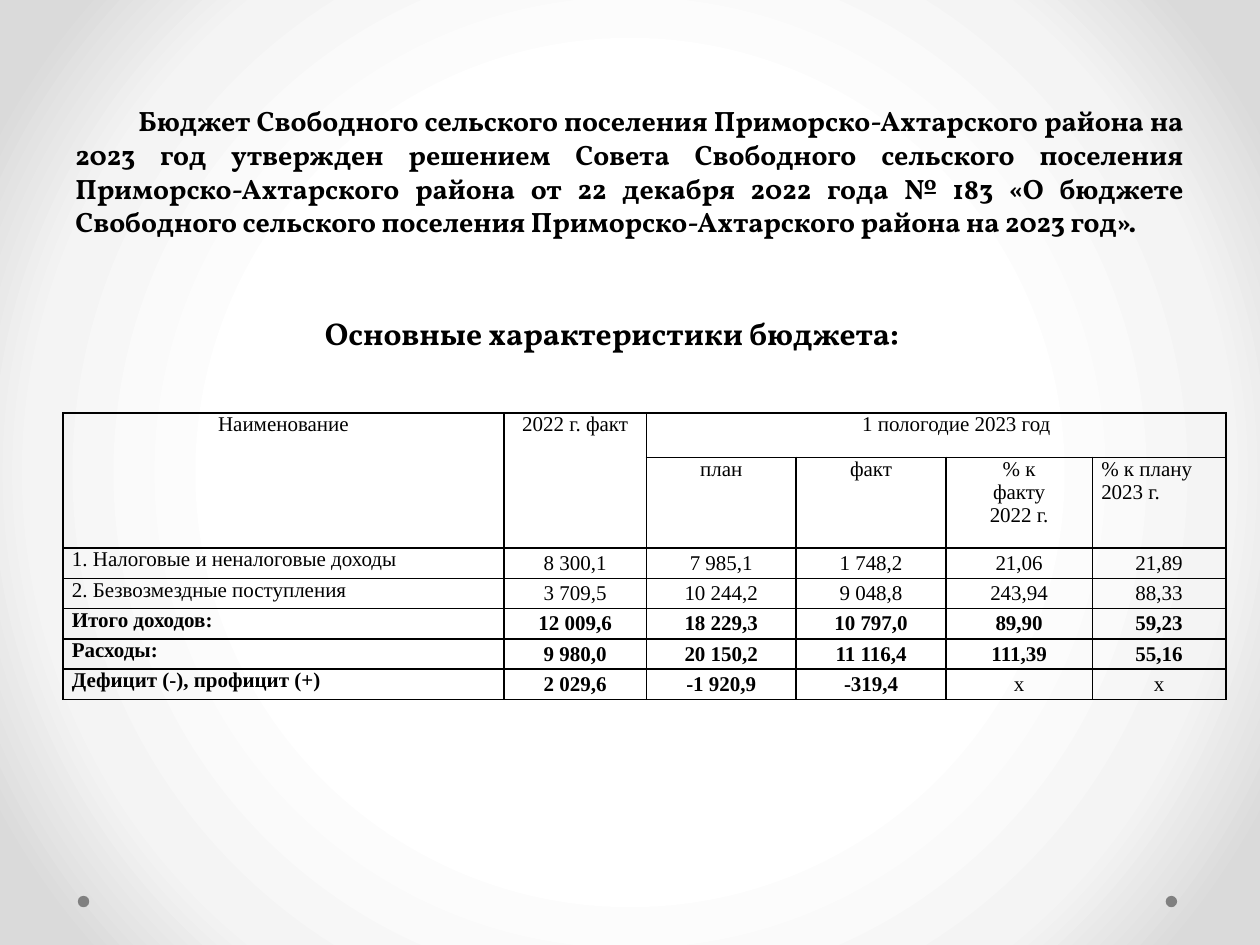
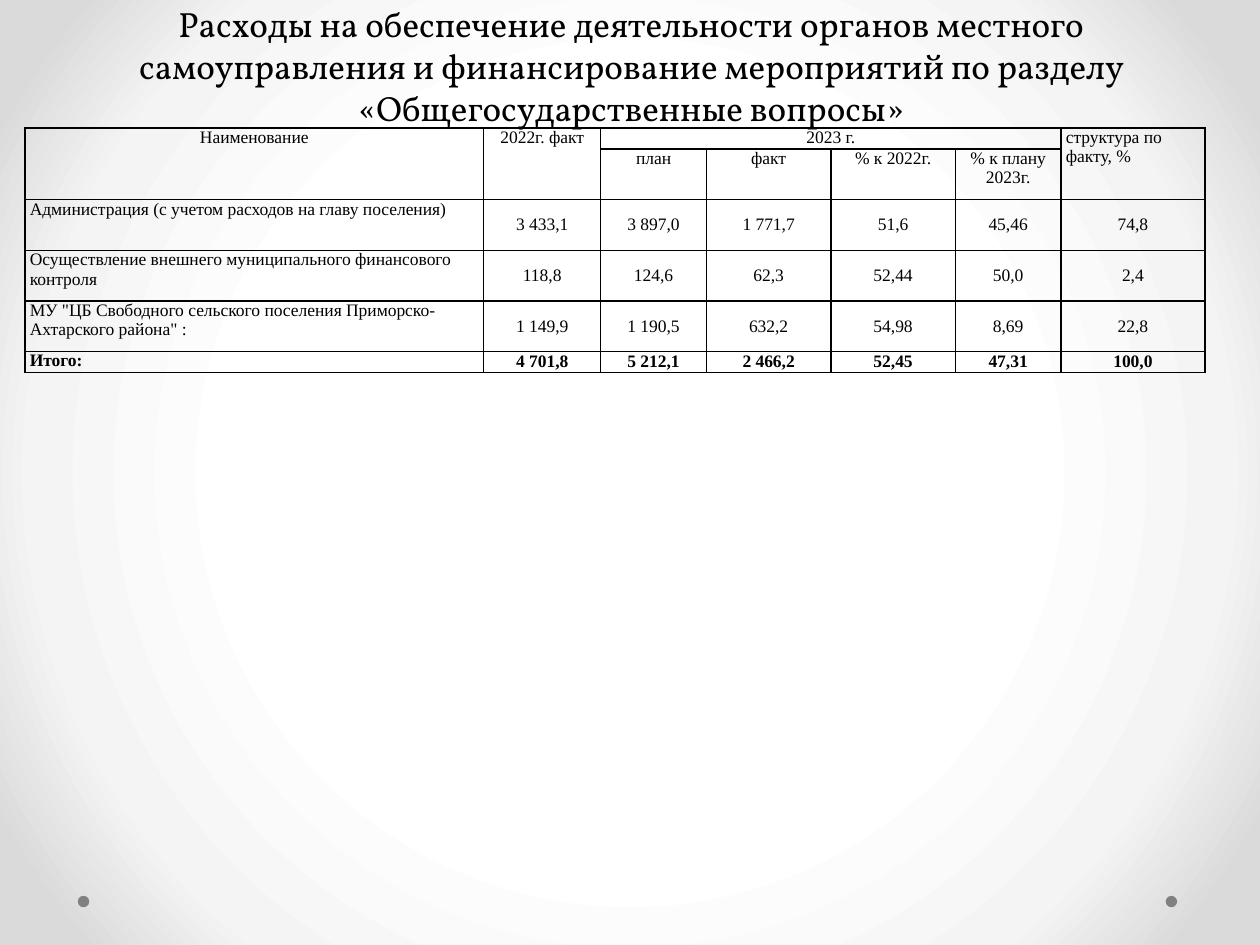
from lxml import etree
from pptx import Presentation
from pptx.dml.color import RGBColor
from pptx.enum.shapes import MSO_SHAPE
from pptx.enum.text import MSO_ANCHOR, PP_ALIGN
from pptx.oxml import parse_xml
from pptx.oxml.ns import nsdecls, qn
from pptx.util import Cm, Pt

LEFT, CENTER, JUSTIFY = PP_ALIGN.LEFT, PP_ALIGN.CENTER, PP_ALIGN.JUSTIFY
TOP, MIDDLE, BOTTOM = MSO_ANCHOR.TOP, MSO_ANCHOR.MIDDLE, MSO_ANCHOR.BOTTOM
OVAL = MSO_SHAPE.OVAL

BLACK = RGBColor(0x00, 0x00, 0x00)
GREY = RGBColor(0x80, 0x80, 0x80)
BACKGROUND_STOPS = [
    (50, RGBColor(0xFF, 0xFF, 0xFF)),
    (76, RGBColor(0xF4, 0xF4, 0xF4)),
    (92, RGBColor(0xDA, 0xDA, 0xDA)),
]
TITLE_FONT = "Vollkorn"
TABLE_FONT = "Times New Roman"
BORDER_WIDTH = Pt(1)
BLANK_LAYOUT = 6

DOT_LEFTS, DOT_TOP, DOT_SIZE = (1.57, 23.5), 18.06, 0.23

BUDGET_TITLE = (
    "\tБюджет Свободного сельского поселения Приморско-Ахтарского района на 2023 год "
    "утвержден решением Совета Свободного сельского поселения Приморско-Ахтарского района "
    "от 22 декабря 2022 года № 183 «О бюджете Свободного сельского поселения "
    "Приморско-Ахтарского района на 2023 год»."
)
BUDGET_HEADING = "Основные характеристики бюджета:"
EXPENSES_TITLE = (
    "Расходы на обеспечение деятельности органов местного самоуправления и финансирование "
    "мероприятий по разделу «Общегосударственные вопросы»"
)

# Header cells: row, column, text, rows spanned, columns spanned, alignment
BUDGET_TABLE = {
    "position": (1.27, 8.33),
    "columns": [8.89, 2.87, 3.02, 3.02, 2.95, 2.69],
    "rows": [0.89, 1.83] + [0.61] * 5,
    "font_size": 12,
    "margin": 0.18,
    "header": [
        (0, 0, "Наименование", 2, 1, CENTER),
        (0, 1, "2022 г. факт", 2, 1, CENTER),
        (0, 2, "1 пологодие 2023 год", 1, 4, CENTER),
        (1, 2, "план", 1, 1, CENTER),
        (1, 3, "факт", 1, 1, CENTER),
        (1, 4, "% к\nфакту\n2022 г.", 1, 1, CENTER),
        (1, 5, "% к плану\n2023 г.", 1, 1, LEFT),
    ],
    "body": [
        ("1. Налоговые и неналоговые доходы", "8 300,1", "7 985,1", "1 748,2", "21,06", "21,89"),
        ("2. Безвозмездные поступления", "3 709,5", "10 244,2", "9 048,8", "243,94", "88,33"),
        ("Итого доходов:", "12 009,6", "18 229,3", "10 797,0", "89,90", "59,23"),
        ("Расходы:", "9 980,0", "20 150,2", "11 116,4", "111,39", "55,16"),
        ("Дефицит (-), профицит (+)", "2 029,6", "-1 920,9", "-319,4", "х", "х"),
    ],
    "bold_rows": 3,
}
EXPENSES_TABLE = {
    "position": (0.5, 2.58),
    "columns": [9.25, 2.36, 2.13, 2.51, 2.51, 2.13, 2.9],
    "rows": [0.36] + [1.02] * 4 + [0.23],
    "font_size": 10,
    "margin": 0.1,
    "header": [
        (0, 0, "Наименование", 2, 1, CENTER),
        (0, 1, "2022г. факт", 2, 1, CENTER),
        (0, 2, "2023 г.", 1, 4, CENTER),
        (0, 6, "структура по факту, %", 2, 1, LEFT),
        (1, 2, "план", 1, 1, CENTER),
        (1, 3, "факт", 1, 1, CENTER),
        (1, 4, "% к 2022г.", 1, 1, CENTER),
        (1, 5, "% к плану 2023г.", 1, 1, CENTER),
    ],
    "body": [
        ("Администрация (с учетом расходов на главу поселения)",
         "3 433,1", "3 897,0", "1 771,7", "51,6", "45,46", "74,8"),
        ("Осуществление внешнего муниципального финансового контроля",
         "118,8", "124,6", "62,3", "52,44", "50,0", "2,4"),
        ("МУ \"ЦБ Свободного сельского поселения Приморско-Ахтарского района\" :",
         "1 149,9", "1 190,5", "632,2", "54,98", "8,69", "22,8"),
        ("Итого:", "4 701,8", "5 212,1", "2 466,2", "52,45", "47,31", "100,0"),
    ],
    "bold_rows": 1,
}


def set_background(master):
    """Give the master a circular gradient that darkens towards the corners."""
    master.background.fill.solid()
    properties = master.element.find(".//" + qn("p:bgPr"))
    stops = "".join(
        f'<a:gs pos="{position * 1000}"><a:srgbClr val="{color}"/></a:gs>'
        for position, color in BACKGROUND_STOPS
    )
    gradient = parse_xml(
        f'<a:gradFill {nsdecls("a")} rotWithShape="1"><a:gsLst>{stops}</a:gsLst>'
        '<a:path path="circle"><a:fillToRect l="50000" t="50000" r="50000" b="50000"/></a:path>'
        "</a:gradFill>"
    )
    properties.replace(properties.find(qn("a:solidFill")), gradient)


def add_slide(presentation):
    slide = presentation.slides.add_slide(presentation.slide_layouts[BLANK_LAYOUT])
    for left in DOT_LEFTS:
        dot = slide.shapes.add_shape(OVAL, Cm(left), Cm(DOT_TOP), Cm(DOT_SIZE), Cm(DOT_SIZE))
        dot.shadow.inherit = False
        dot.fill.solid()
        dot.fill.fore_color.rgb = GREY
        dot.line.fill.background()
    return slide


def format_text(text_frame, font_name, size, bold, alignment):
    for paragraph in text_frame.paragraphs:
        paragraph.alignment = alignment
        for run in paragraph.runs:
            run.font.name = font_name
            run.font.size = Pt(size)
            run.font.bold = bold
            run.font.color.rgb = BLACK


def add_text(slide, text, box, size, bold=False, alignment=LEFT, anchor=TOP, wrap=True):
    text_frame = slide.shapes.add_textbox(*map(Cm, box)).text_frame
    text_frame.text = text
    text_frame.word_wrap = wrap
    text_frame.vertical_anchor = anchor
    format_text(text_frame, TITLE_FONT, size, bold, alignment)


def add_borders(cell):
    properties = cell._tc.get_or_add_tcPr()
    for side in ("a:lnL", "a:lnR", "a:lnT", "a:lnB"):
        line = etree.SubElement(properties, qn(side), w=str(BORDER_WIDTH))
        fill = etree.SubElement(line, qn("a:solidFill"))
        etree.SubElement(fill, qn("a:srgbClr"), val=str(BLACK))


def add_budget_table(slide, data):
    columns, rows, size = data["columns"], data["rows"], data["font_size"]
    table = slide.shapes.add_table(
        len(rows), len(columns), *map(Cm, data["position"]), Cm(sum(columns)), Cm(sum(rows))
    ).table
    table.first_row = table.horz_banding = False
    for column, width in zip(table.columns, columns):
        column.width = Cm(width)
    for row, height in zip(table.rows, rows):
        row.height = Cm(height)

    for cell in table.iter_cells():
        add_borders(cell)
        cell.fill.background()
        cell.margin_left = cell.margin_right = Cm(data["margin"])
        cell.margin_top = cell.margin_bottom = 0
        # Covered cells stay empty and must not stretch their row
        end_properties = cell.text_frame.paragraphs[0]._p.get_or_add_endParaRPr()
        end_properties.set("sz", str(size * 100))

    for row, column, text, row_span, column_span, alignment in data["header"]:
        cell = table.cell(row, column)
        if row_span * column_span > 1:
            cell.merge(table.cell(row + row_span - 1, column + column_span - 1))
        cell.text = text
        format_text(cell.text_frame, TABLE_FONT, size, False, alignment)

    first_body_row = len(rows) - len(data["body"])
    first_bold_row = len(rows) - data["bold_rows"]
    for row, values in enumerate(data["body"], first_body_row):
        for column, value in enumerate(values):
            cell = table.cell(row, column)
            cell.text = value
            cell.vertical_anchor = MIDDLE if column else TOP
            bold = row >= first_bold_row and value != "х"
            format_text(cell.text_frame, TABLE_FONT, size, bold, CENTER if column else LEFT)
    return table


def main():
    presentation = Presentation()
    presentation.slide_width, presentation.slide_height = Cm(25.4), Cm(19.05)
    set_background(presentation.slide_master)

    slide = add_slide(presentation)
    add_text(slide, BUDGET_TITLE, (1.27, 0, 22.86, 4.93), 16, True, JUSTIFY, BOTTOM)
    add_text(slide, BUDGET_HEADING, (6.3, 6.2, 12.42, 1.02), 18, True, wrap=False)
    table = add_budget_table(slide, BUDGET_TABLE)
    table.cell(0, 2).margin_left = Cm(1)

    slide = add_slide(presentation)
    add_text(slide, EXPENSES_TITLE, (1.3, 0.03, 22.86, 2.69), 20, False, CENTER, BOTTOM)
    add_budget_table(slide, EXPENSES_TABLE)

    presentation.save("out.pptx")


if __name__ == "__main__":
    main()
